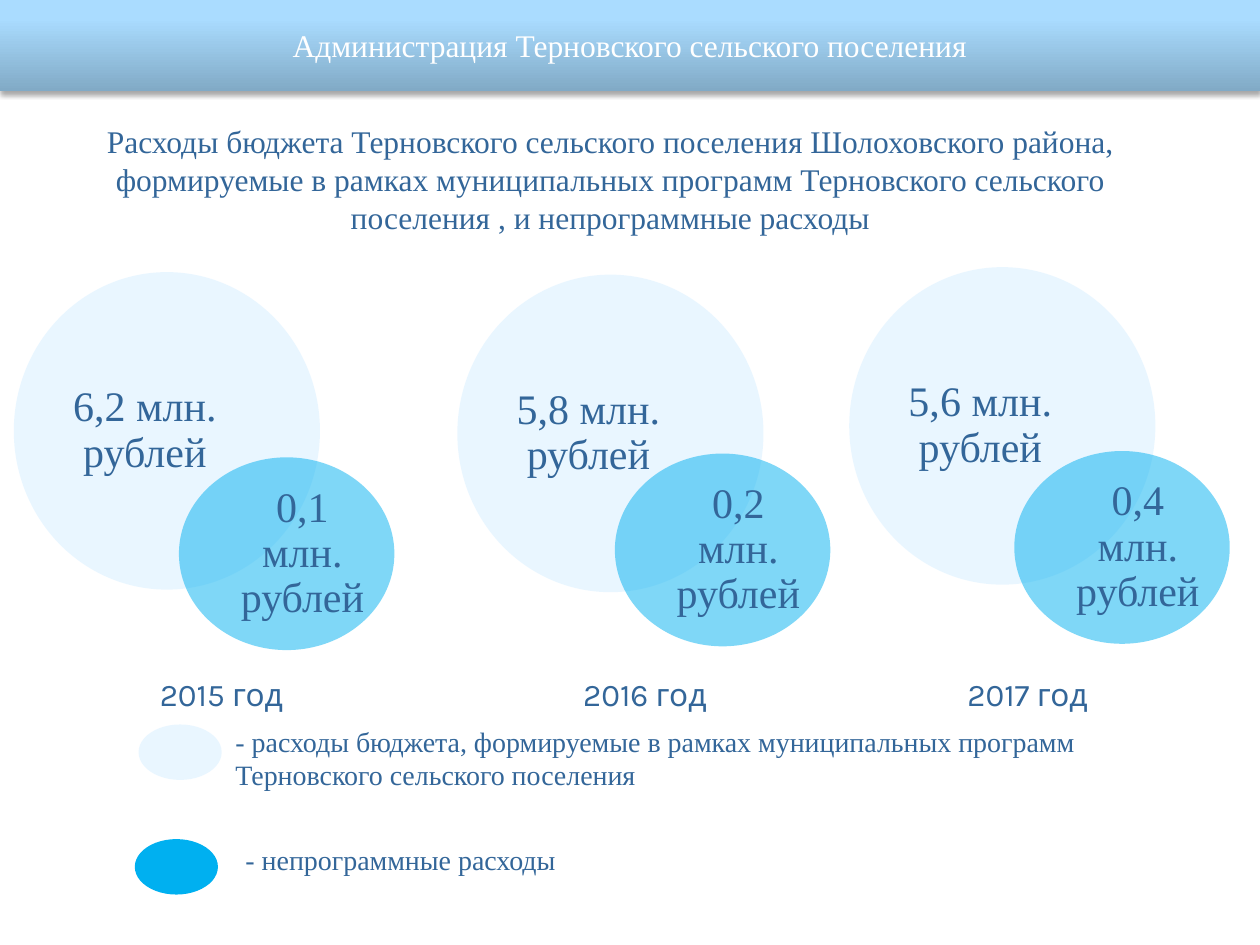
import copy
from dataclasses import dataclass

import lxml.etree
import pptx
import pptx.dml.color
import pptx.enum.shapes
import pptx.enum.text
import pptx.oxml
import pptx.oxml.ns
import pptx.util

ALIGN = pptx.enum.text.PP_ALIGN
ANCHOR = pptx.enum.text.MSO_ANCHOR
SHAPE = pptx.enum.shapes.MSO_SHAPE
COLUMNS, ROWS = 100, 75


@dataclass(frozen=True)
class Theme:
    """Colours, fonts and type sizes of the slide."""
    text: str = "336699"
    banner_text: str = "FFFFFF"
    banner_stops: tuple = ((0, "81AAC6"), (0.8, "AADCFF"), (1, "ACDDFF"))
    programme: str = "D4EEFF"
    other: str = "00B0F0"
    serif: str = "Times New Roman"
    sans: str = "Karla"
    heading: int = 18
    amount: int = 24
    legend: int = 16


@dataclass(frozen=True)
class Box:
    """A rectangle measured in grid columns and rows."""
    left: float
    top: float
    width: float
    height: float

    def inside(self, left, top, width, height):
        """Return a box offset from this one's top left corner."""
        return Box(self.left + left, self.top + top, width, height)


THEME = Theme()
SLIDE_WIDTH, SLIDE_HEIGHT = pptx.util.Inches(10), pptx.util.Inches(7.5)


def place(box):
    """Convert a grid box to slide lengths."""
    column, row = SLIDE_WIDTH / COLUMNS, SLIDE_HEIGHT / ROWS
    return (round(box.left * column), round(box.top * row),
            round(box.width * column), round(box.height * row))


def colour(value):
    """Return an RGB colour."""
    return pptx.dml.color.RGBColor.from_string(value)


def write(shape, text, size, font=THEME.serif, fill=THEME.text,
          align=ALIGN.LEFT, anchor=ANCHOR.TOP):
    """Write one formatted run into a shape and return its paragraph."""
    frame = shape.text_frame
    frame.word_wrap = True
    frame.vertical_anchor = anchor
    paragraph = frame.paragraphs[0]
    paragraph.alignment = align
    run = paragraph.add_run()
    run.text = text
    run.font.name = font
    run.font.size = pptx.util.Pt(size)
    run.font.color.rgb = colour(fill)
    return paragraph


def add_ellipse(shapes, box, fill, opacity=100):
    """Draw a borderless ellipse."""
    ellipse = shapes.add_shape(SHAPE.OVAL, *place(box))
    ellipse.shadow.inherit = False
    ellipse.fill.solid()
    ellipse.fill.fore_color.rgb = colour(fill)
    ellipse.line.fill.background()
    if opacity < 100:
        tint = ellipse.fill._xPr.find(".//" + pptx.oxml.ns.qn("a:srgbClr"))
        alpha = lxml.etree.SubElement(tint, pptx.oxml.ns.qn("a:alpha"))
        alpha.set("val", str(opacity * 1000))


def add_label(shapes, box, text, size, font=THEME.serif):
    """Add a left-aligned text box."""
    write(shapes.add_textbox(*place(box)), text, size, font)


def add_amount(shapes, box, text):
    """Add a centred amount without margins."""
    label = shapes.add_textbox(*place(box))
    frame = label.text_frame
    frame.margin_left = frame.margin_right = 0
    frame.margin_top = frame.margin_bottom = 0
    paragraph = write(label, text, THEME.amount, align=ALIGN.CENTER,
                      anchor=ANCHOR.MIDDLE)
    paragraph.line_spacing = 0.9
    paragraph.space_after = pptx.util.Pt(0.35 * THEME.amount)


def add_banner(slide, box, text):
    """Draw the gradient banner with its soft shadow."""
    banner = slide.shapes.add_shape(SHAPE.RECTANGLE, *place(box))
    banner.line.fill.background()
    banner.fill.gradient()
    banner.fill.gradient_angle = 90
    stop_list = banner.fill._xPr.find(".//" + pptx.oxml.ns.qn("a:gsLst"))
    stop_list.append(copy.deepcopy(stop_list[-1]))
    for stop, (position, value) in zip(banner.fill.gradient_stops, THEME.banner_stops):
        stop.position = position
        stop.color.rgb = colour(value)
    banner.shadow.inherit = False
    effects = banner.fill._xPr.find(pptx.oxml.ns.qn("a:effectLst"))
    effects.append(pptx.oxml.parse_xml(
        f'<a:outerShdw {pptx.oxml.ns.nsdecls("a")} blurRad="{pptx.util.Pt(3.1)}" '
        f'dist="{pptx.util.Pt(1.8)}" dir="5400000" rotWithShape="0">'
        '<a:srgbClr val="000000"><a:alpha val="35000"/></a:srgbClr></a:outerShdw>'))
    write(banner, text, THEME.heading, fill=THEME.banner_text,
          align=ALIGN.CENTER, anchor=ANCHOR.MIDDLE)


def add_title(slide, box, text):
    """Move and format the title placeholder."""
    title = slide.shapes.title
    title.left, title.top, title.width, title.height = place(box)
    title.text_frame.auto_size = pptx.enum.text.MSO_AUTO_SIZE.NONE
    write(title, text, THEME.heading, align=ALIGN.CENTER)


def add_year(slide, box, overlap, programme, other):
    """Draw a year's large and small circles as one group."""
    shapes = slide.shapes.add_group_shape().shapes
    small = box.inside(*overlap, 17.1, 15.3)
    add_ellipse(shapes, box, THEME.programme, 50)
    add_amount(shapes, box.inside(3.4, 2.95, 14, 19.3), f"{programme} млн. рублей")
    add_ellipse(shapes, small, THEME.other, 50)
    add_amount(shapes, small.inside(4.85, 1.8, 9.9, 11.7), f"{other} млн. рублей")


def add_legend_entry(slide, box, text_offset, text, fill, opacity):
    """Draw a legend marker and its explanation."""
    add_ellipse(slide.shapes, box.inside(0, 0, 6.6, 4.4), fill, opacity)
    label = box.inside(*text_offset, box.width - text_offset[0], box.height)
    add_label(slide.shapes, label, text, THEME.legend)


def main():
    """Build and save the slide."""
    presentation = pptx.Presentation()
    presentation.slide_width, presentation.slide_height = SLIDE_WIDTH, SLIDE_HEIGHT
    slide = presentation.slides.add_slide(presentation.slide_layouts[5])

    add_banner(slide, Box(0, 0, COLUMNS, 7.2),
               "Администрация Терновского сельского поселения")
    add_title(slide, Box(2, 9.2, 92.9, 10.1),
              "Расходы бюджета Терновского сельского поселения Шолоховского района, "
              "формируемые в рамках муниципальных программ Терновского сельского "
              "поселения , и непрограммные расходы")

    years = (
        ("2015", (1.1, 21.6), (13.1, 14.7), "6,2", "0,1", 11.7),
        ("2016", (36.3, 21.8), (12.5, 14.2), "5,8", "0,2", 45.3),
        ("2017", (67.4, 21.2), (13.1, 14.6), "5,6", "0,4", 75.8),
    )
    for year, corner, overlap, programme, other, label_left in years:
        add_year(slide, Box(*corner, 24.3, 25.2), overlap, programme, other)
        add_label(slide.shapes, Box(label_left, 53.1, 15.6, 4), f"{year} год",
                  THEME.heading, THEME.sans)

    add_legend_entry(slide, Box(11, 57.5, 83.9, 6.4), (6.7, -0.5),
                     "- расходы бюджета, формируемые в рамках муниципальных "
                     "программ Терновского сельского поселения",
                     THEME.programme, 50)
    add_legend_entry(slide, Box(10.7, 66.6, 75.5, 3.7), (7.8, -0.2),
                     "- непрограммные расходы", THEME.other, 100)
    presentation.save("out.pptx")


if __name__ == "__main__":
    main()
